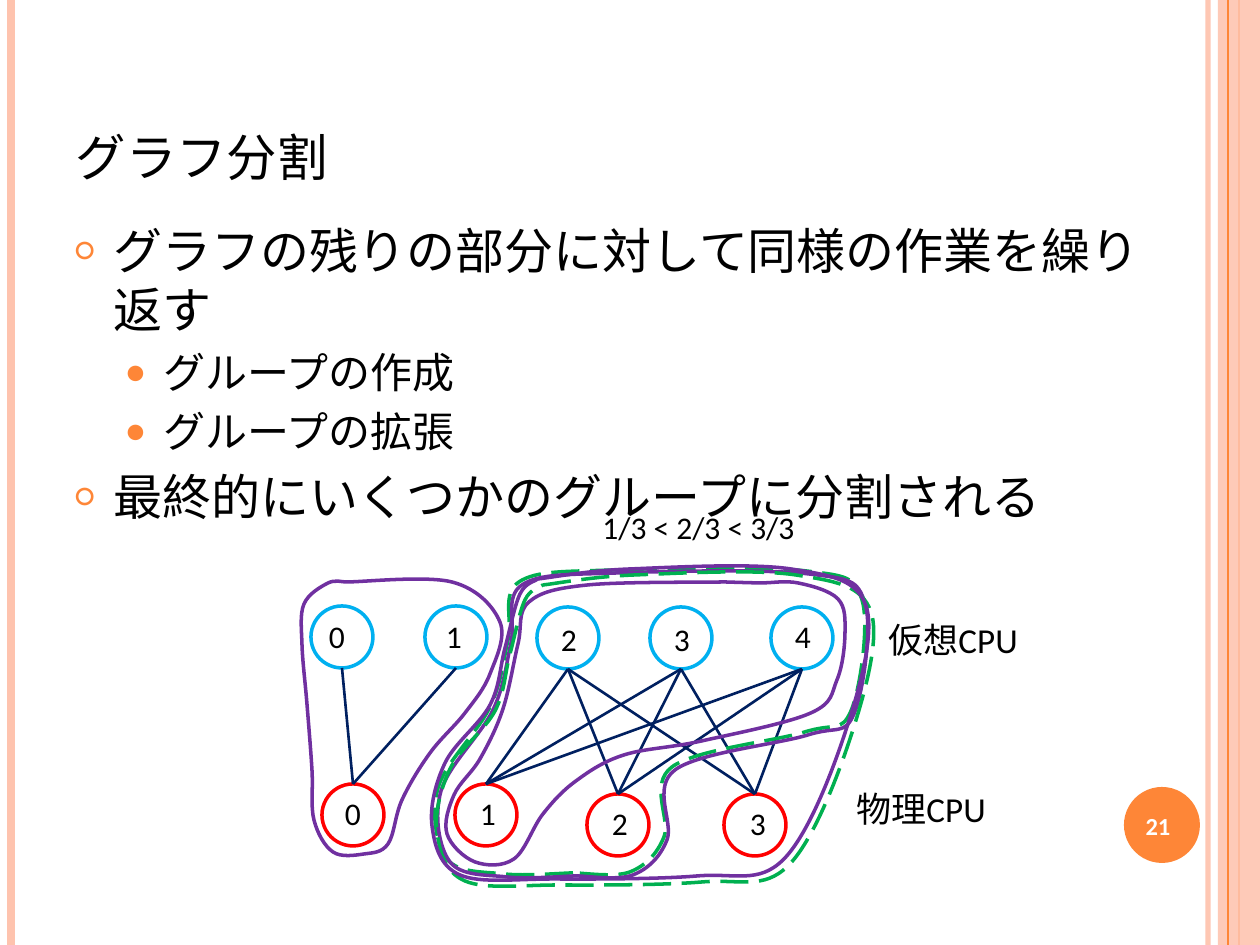
import itertools
from dataclasses import dataclass
from typing import NamedTuple

import lxml.etree
import pptx
import pptx.dml.color
import pptx.enum.dml
import pptx.enum.shapes
import pptx.enum.text
import pptx.oxml.ns
import pptx.util

SCALE = 914400 / 126
ALIGN = pptx.enum.text.PP_ALIGN
ANCHOR = pptx.enum.text.MSO_ANCHOR
SHAPE = pptx.enum.shapes.MSO_SHAPE


@dataclass(frozen=True)
class Theme:
    font: str = "Calibri"
    ink: str = "000000"
    white: str = "FFFFFF"
    orange: str = "FE8637"
    peach: str = "FEC3AE"
    blue: str = "00B0F0"
    red: str = "FF0000"
    navy: str = "002060"
    purple: str = "7030A0"
    green: str = "00B050"
    title: int = 36
    body: int = 28
    sub: int = 24
    side: int = 20
    label: int = 18
    page: int = 14


THEME = Theme()


class Node(NamedTuple):
    text: str
    left: int
    top: int
    dx: int
    dy: int


class Rule(NamedTuple):
    x: int
    color: str
    width: float
    alpha: int = 100


class Point(NamedTuple):
    text: str
    level: int = 0


class Loop(NamedTuple):
    knots: list
    color: str
    dx: int = 0
    dy: int = 0


SIZE, BOX = 62, 64
VIRTUAL = [Node("0", 311, 606, -6, -2), Node("1", 425, 606, -3, -2), Node("2", 537, 607, 0, 0),
           Node("3", 650, 607, 0, 0), Node("4", 771, 607, 0, -3)]
REAL = [Node("0", 322, 784, -1, -3), Node("1", 455, 784, 1, -3),
        Node("2", 587, 794, 1, -3), Node("3", 724, 794, 2, -3)]
EDGES = [(0, 0), (1, 0), *itertools.product((2, 3, 4), (1, 2, 3))]
RULES = [Rule(1208, THEME.peach, 3, 93), Rule(11, THEME.peach, 4.5), Rule(1239, THEME.orange, 1.5)]
POINTS = [Point("グラフの残りの部分に対して同様の作業を繰り返す"), Point("グループの作成", 1),
          Point("グループの拡張", 1), Point("最終的にいくつかのグループに分割される")]

LEFT = [(346, 582), (452, 582), (500, 622), (490, 674), (465, 713), (430, 753), (402, 800),
        (388, 844), (364, 854), (333, 852), (314, 820), (312, 770), (307, 704), (302, 645),
        (304, 604), (328, 583)]
FIRST = [(724, 582), (588, 585), (529, 602), (518, 644), (503, 709), (480, 759), (454, 795),
         (447, 834), (475, 862), (514, 859), (543, 814), (576, 781), (624, 755), (702, 741),
         (811, 713), (837, 680), (845, 633), (838, 599), (798, 583), (760, 583)]
SECOND = [(573, 873), (504, 874), (447, 859), (438, 788), (490, 707), (508, 640), (519, 582),
          (614, 570), (806, 571), (862, 600), (851, 711), (805, 732), (672, 767), (664, 837),
          (630, 872)]
THIRD = [(543, 585), (634, 575), (796, 575), (871, 612), (851, 736), (788, 866), (702, 882),
         (561, 885), (465, 881), (437, 832), (450, 769), (495, 711), (510, 654), (525, 600)]
LOOPS = [Loop(LEFT, THEME.purple), Loop(FIRST, THEME.purple),
         Loop(SECOND, THEME.green), Loop(SECOND, THEME.purple, 3, 3),
         Loop(THIRD, THEME.green), Loop(THIRD, THEME.purple, -5, -6)]


def px(*vals: float) -> list:
    return [pptx.util.Emu(round(val * SCALE)) for val in vals]


def rgb(code: str):
    return pptx.dml.color.RGBColor.from_string(code)


def add_tag(root, name: str, **attrs):
    return lxml.etree.SubElement(root, pptx.oxml.ns.qn(name), attrs)


def fade(part, alpha: int) -> None:
    """Set the opacity, in percent, of the solid colour found in part."""
    tone = next(part.iter(pptx.oxml.ns.qn("a:srgbClr")))
    add_tag(tone, "a:alpha", val=str(alpha * 1000))


def paint(shape, fill: str = "", line: str = "", width: float = 2) -> None:
    shape.shadow.inherit = False
    if fill:
        shape.fill.solid()
        shape.fill.fore_color.rgb = rgb(fill)
    else:
        shape.fill.background()
    if line:
        shape.line.color.rgb = rgb(line)
        shape.line.width = pptx.util.Pt(width)
    else:
        shape.line.fill.background()


def style(para, size: int, color: str = THEME.ink, bold: bool = False) -> None:
    for run in para.runs:
        run.font.name, run.font.size, run.font.bold = THEME.font, pptx.util.Pt(size), bold
        run.font.color.rgb = rgb(color)


def add_text(slide, text: str, box: tuple, size: int, color: str = THEME.ink,
             bold: bool = False, mid: bool = False, wrap: bool = True):
    frame = slide.shapes.add_textbox(*px(*box)).text_frame
    frame.text, frame.word_wrap = text, wrap
    if mid:
        frame.vertical_anchor = ANCHOR.MIDDLE
        frame.paragraphs[0].alignment = ALIGN.CENTER
    style(frame.paragraphs[0], size, color, bold)
    return frame


def add_line(slide, ends: tuple, color: str, width: float, alpha: int = 100) -> None:
    line = slide.shapes.add_connector(pptx.enum.shapes.MSO_CONNECTOR.STRAIGHT, *px(*ends))
    line.line.color.rgb, line.line.width = rgb(color), pptx.util.Pt(width)
    add_tag(line._element.spPr, "a:effectLst")
    if alpha < 100:
        fade(line._element.spPr, alpha)


def add_frame(slide) -> None:
    """Draw the stripes at both edges and the page number disc."""
    for rule in RULES:
        add_line(slide, (rule.x, 0, rule.x, 945), rule.color, rule.width, rule.alpha)
    band = slide.shapes.add_shape(SHAPE.RECTANGLE, *px(1218, 0, 42, 945))
    paint(band, THEME.peach)
    fade(band._element.spPr, 87)
    add_line(slide, (1228, 0, 1228, 945), THEME.orange, 0.75)
    disc = slide.shapes.add_shape(SHAPE.OVAL, *px(1124, 787, 76, 76))
    paint(disc, THEME.orange)
    add_text(slide, "21", (1116, 790, 84, 72), THEME.page, THEME.white, bold=True, mid=True)


def set_title(slide, text: str) -> None:
    title = slide.shapes.title
    title.left, title.top, title.width, title.height = px(63, 38, 1082, 157)
    frame = title.text_frame
    frame.text, frame.vertical_anchor = text, ANCHOR.BOTTOM
    para = frame.paragraphs[0]
    para.alignment = ALIGN.LEFT
    style(para, THEME.title)
    para.runs[0]._r.get_or_add_rPr().set("cap", "small")


def add_body(slide) -> None:
    frame = add_text(slide, "\n".join(p.text for p in POINTS), (63, 214, 1134, 624), THEME.body)
    for para, point in zip(frame.paragraphs, POINTS):
        sub = point.level > 0
        para.level = point.level
        para.space_before = pptx.util.Pt(5 if sub else 6)
        style(para, THEME.sub if sub else THEME.body)
        props = para._p.get_or_add_pPr()
        props.set("marL", str(px(88 if sub else 38)[0]))
        props.set("indent", str(px(-38)[0]))
        add_tag(add_tag(props, "a:buClr"), "a:srgbClr", val=THEME.orange)
        add_tag(props, "a:buSzPct", val="80000" if sub else "70000")
        add_tag(props, "a:buFont", typeface=THEME.font)
        add_tag(props, "a:buChar", char="●" if sub else "○")


def add_node(slide, node: Node, color: str, fill: str = "") -> None:
    ring = slide.shapes.add_shape(SHAPE.OVAL, *px(node.left, node.top, SIZE, SIZE))
    paint(ring, fill, color)
    box = (node.left + node.dx, node.top + node.dy, BOX, BOX)
    add_text(slide, node.text, box, THEME.label, mid=True)


def bend(shape, dots: list) -> None:
    """Turn the straight sides between the dots into smooth Bézier curves."""
    sides = list(shape._element.iter(pptx.oxml.ns.qn("a:lnTo")))
    path = [dots[0], *dots, dots[-1]]
    for side, a, b, c, d in zip(sides, path, path[1:], path[2:], path[3:]):
        curve = lxml.etree.Element(pptx.oxml.ns.qn("a:cubicBezTo"))
        exit_dot = [q + (r - p) / 6 for p, q, r in zip(a, b, c)]
        entry = [q - (r - p) / 6 for p, q, r in zip(b, c, d)]
        for x, y in (exit_dot, entry, c):
            add_tag(curve, "a:pt", x=str(round(x - shape.left)), y=str(round(y - shape.top)))
        side.getparent().replace(side, curve)


def add_loop(slide, loop: Loop) -> None:
    dots = [px(x + loop.dx, y + loop.dy) for x, y in [*loop.knots, loop.knots[0]]]
    pen = slide.shapes.build_freeform(*dots[0])
    pen.add_line_segments(dots[1:], close=True)
    shape = pen.convert_to_shape()
    bend(shape, dots)
    paint(shape, line=loop.color)
    if loop.color == THEME.green:
        shape.line.dash_style = pptx.enum.dml.MSO_LINE.LONG_DASH


def main() -> None:
    deck = pptx.Presentation()
    deck.slide_width, deck.slide_height = px(1260, 945)
    slide = deck.slides.add_slide(deck.slide_layouts[5])
    add_frame(slide)
    set_title(slide, "グラフ分割")
    add_body(slide)
    for node in VIRTUAL:
        add_node(slide, node, THEME.blue, THEME.white)
    for node in REAL:
        add_node(slide, node, THEME.red)
    add_text(slide, "仮想CPU", (876, 612, 252, 64), THEME.side)
    add_text(slide, "物理CPU", (844, 781, 252, 64), THEME.side)
    half = SIZE // 2
    for head, tail in EDGES:
        top, base = VIRTUAL[head], REAL[tail]
        ends = (top.left + half, top.top + SIZE, base.left + half, base.top)
        add_line(slide, ends, THEME.navy, 1.5)
    for loop in LOOPS:
        add_loop(slide, loop)
    add_text(slide, "1/3 < 2/3 < 3/3", (590, 502, 219, 50), THEME.label, wrap=False)
    deck.save("out.pptx")


if __name__ == "__main__":
    main()
